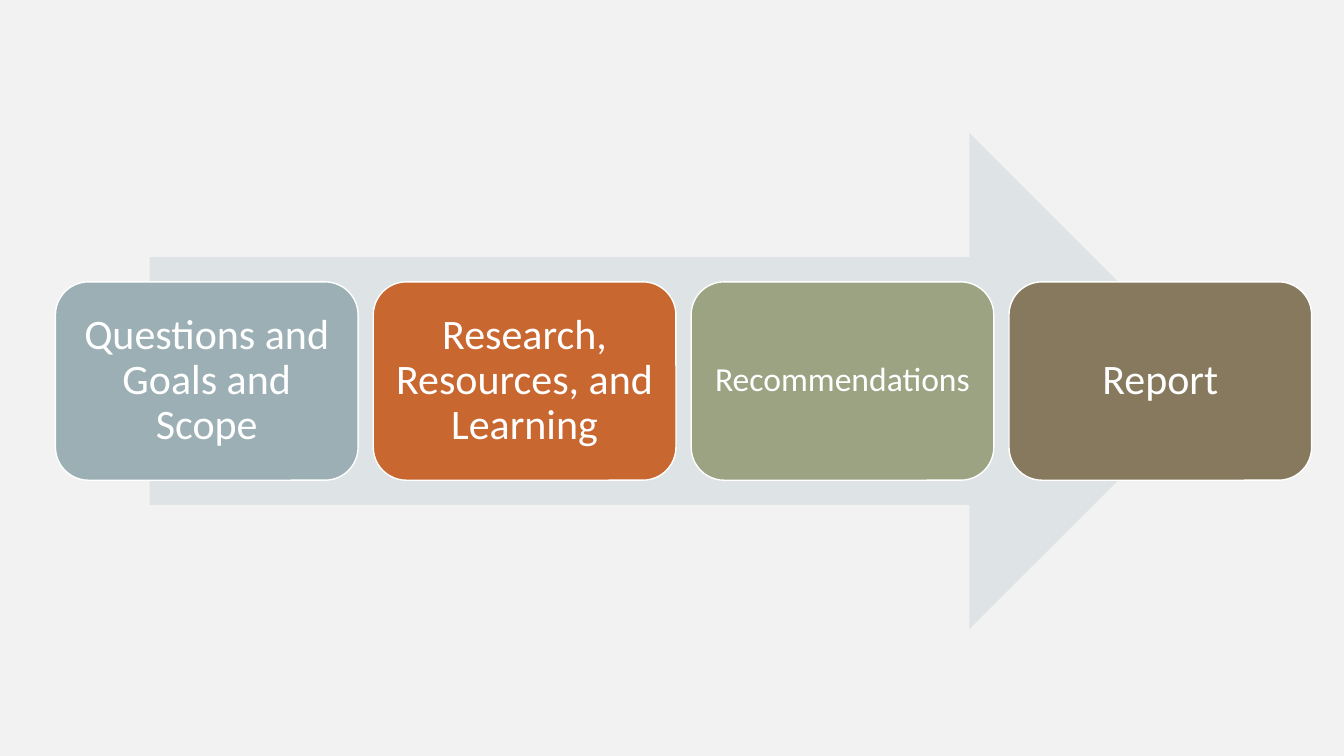
from dataclasses import dataclass

from pptx import Presentation
from pptx.dml.color import RGBColor
from pptx.enum.shapes import MSO_SHAPE
from pptx.enum.text import MSO_ANCHOR, PP_ALIGN
from pptx.util import Inches, Pt


@dataclass(frozen=True)
class Theme:
    background: str = "F2F2F2"
    arrow: str = "DEE3E5"
    white: str = "FFFFFF"
    steps: tuple = ("9BAFB5", "C96731", "9CA383", "87795D")
    font: str = "Calibri"
    large: int = 30
    small: int = 24


THEME = Theme()
STEPS = [
    ("Questions and Goals and Scope", THEME.large),
    ("Research, Resources, and Learning", THEME.large),
    ("Recommendations", THEME.small),
    ("Report", THEME.large),
]


def paint(fill, color):
    fill.solid()
    fill.fore_color.rgb = RGBColor.from_string(color)


def add_filled_shape(slide, preset, box, color):
    shape = slide.shapes.add_shape(preset, *(Inches(n) for n in box))
    shape.shadow.inherit = False
    paint(shape.fill, color)
    return shape


def add_step(slide, box, label, size, color):
    step = add_filled_shape(slide, MSO_SHAPE.ROUNDED_RECTANGLE, box, color)
    step.line.color.rgb = RGBColor.from_string(THEME.white)
    step.line.width = Pt(1)

    # Label: the inner margin grows with the type size
    frame = step.text_frame
    frame.word_wrap = True
    frame.vertical_anchor = MSO_ANCHOR.MIDDLE
    margin = Inches(size / 250)
    frame.margin_left = frame.margin_right = margin
    frame.margin_top = frame.margin_bottom = margin
    paragraph = frame.paragraphs[0]
    paragraph.text = label
    paragraph.alignment = PP_ALIGN.CENTER
    paragraph.line_spacing = 0.9
    paragraph.font.name = THEME.font
    paragraph.font.size = Pt(size)
    paragraph.font.color.rgb = RGBColor.from_string(THEME.white)


def add_process(slide, left, top, width, height):
    # Arrow behind the steps, 85% of the width and centred
    arrow_width = 0.85 * width
    arrow_box = (left + (width - arrow_width) / 2, top, arrow_width, height)
    arrow = add_filled_shape(slide, MSO_SHAPE.RIGHT_ARROW, arrow_box, THEME.arrow)
    arrow.line.fill.background()

    # Row of equal steps, centred on the arrow
    gap = 0.15
    step_width = (width - gap * (len(STEPS) - 1)) / len(STEPS)
    step_height = 0.4 * height
    step_top = top + (height - step_height) / 2
    for i, ((label, size), color) in enumerate(zip(STEPS, THEME.steps)):
        step_left = left + i * (step_width + gap)
        add_step(slide, (step_left, step_top, step_width, step_height),
                 label, size, color)


def main():
    prs = Presentation()
    prs.slide_width, prs.slide_height = Inches(13.33), Inches(7.5)
    slide = prs.slides.add_slide(prs.slide_layouts[6])
    paint(slide.background.fill, THEME.background)
    add_process(slide, 0.55, 1.32, 12.46, 4.92)
    prs.save("out.pptx")


if __name__ == "__main__":
    main()
